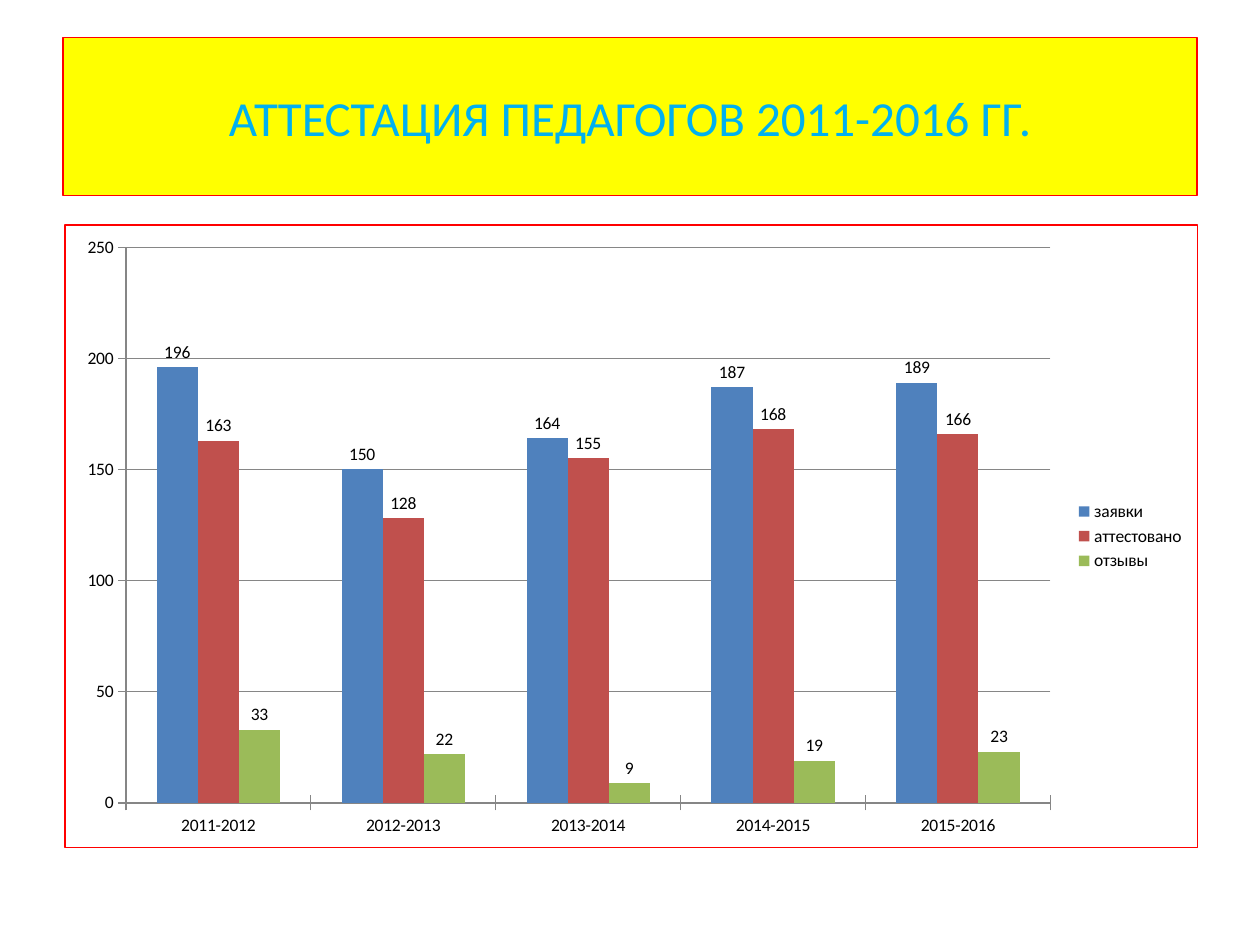
from lxml import etree
from pptx import Presentation
from pptx.chart.data import CategoryChartData
from pptx.dml.color import RGBColor
from pptx.enum.chart import XL_CHART_TYPE, XL_LEGEND_POSITION, XL_LABEL_POSITION, XL_TICK_MARK
from pptx.enum.text import MSO_ANCHOR, PP_ALIGN
from pptx.oxml import parse_xml
from pptx.util import Pt

COLUMNS = XL_CHART_TYPE.COLUMN_CLUSTERED
RIGHT = XL_LEGEND_POSITION.RIGHT
OUTSIDE_END = XL_LABEL_POSITION.OUTSIDE_END
CROSS = XL_TICK_MARK.CROSS
MIDDLE = MSO_ANCHOR.MIDDLE
CENTER = PP_ALIGN.CENTER

YEARS = ["2011-2012", "2012-2013", "2013-2014", "2014-2015", "2015-2016"]
COUNTS = [
    ("заявки", "4F81BD", (196, 150, 164, 187, 189)),
    ("аттестовано", "C0504D", (163, 128, 155, 168, 166)),
    ("отзывы", "9BBB59", (33, 22, 9, 19, 23)),
]
BORDER_XML = (
    '<c:spPr xmlns:c="http://schemas.openxmlformats.org/drawingml/2006/chart"'
    ' xmlns:a="http://schemas.openxmlformats.org/drawingml/2006/main">'
    '<a:ln w="{width}"><a:solidFill><a:srgbClr val="{color}"/></a:solidFill></a:ln></c:spPr>'
)


def rgb(color):
    return RGBColor.from_string(color)


class AttestationSlide:
    """Draws the title and the column chart in one shared style."""

    typeface = "Calibri"
    border = "FF0000"
    border_width = Pt(0.75)
    axis_gray = "868686"

    def __init__(self, slide):
        self.slide = slide

    def set_font(self, font, size, color):
        font.name = self.typeface
        font.size = Pt(size)
        font.color.rgb = rgb(color)

    def title(self, wording, left, top, width, height):
        heading = self.slide.shapes.title
        heading.left, heading.top = Pt(left), Pt(top)
        heading.width, heading.height = Pt(width), Pt(height)
        heading.fill.solid()
        heading.fill.fore_color.rgb = rgb("FFFF00")
        heading.line.color.rgb = rgb(self.border)
        heading.line.width = self.border_width
        heading.text_frame.text = wording
        heading.text_frame.vertical_anchor = MIDDLE
        paragraph = heading.text_frame.paragraphs[0]
        paragraph.alignment = CENTER
        self.set_font(paragraph.font, 28, "00B0F0")

    def columns(self, categories, series, left, top, width, height):
        counts = CategoryChartData()
        counts.categories = categories
        for name, _, values in series:
            counts.add_series(name, values)
        chart = self.slide.shapes.add_chart(
            COLUMNS, Pt(left), Pt(top), Pt(width), Pt(height), counts
        ).chart
        self.set_font(chart.font, 10, "000000")
        chart.has_title = False
        chart.has_legend = True
        chart.legend.position = RIGHT
        chart.legend.include_in_layout = False
        plot = chart.plots[0]
        plot.gap_width = 150
        plot.overlap = 0
        plot.vary_by_categories = False
        for bars, (_, color, _) in zip(plot.series, series):
            bars.format.fill.solid()
            bars.format.fill.fore_color.rgb = rgb(color)
            bars.data_labels.show_value = True
            bars.data_labels.position = OUTSIDE_END
        for axis in (chart.category_axis, chart.value_axis):
            axis.major_tick_mark = CROSS
            axis.format.line.color.rgb = rgb(self.axis_gray)
        chart.value_axis.has_major_gridlines = True
        chart.value_axis.major_gridlines.format.line.color.rgb = rgb(self.axis_gray)
        chart.value_axis.minimum_scale = 0
        chart.value_axis.maximum_scale = 250
        chart.value_axis.major_unit = 50
        self.frame(chart)

    def frame(self, chart):
        outline = parse_xml(BORDER_XML.format(width=int(self.border_width), color=self.border))
        for part in chart.element:
            if etree.QName(part).localname == "chart":
                part.addnext(outline)
                break


def main():
    deck = Presentation()
    deck.slide_width, deck.slide_height = Pt(720), Pt(540)
    page = AttestationSlide(deck.slides.add_slide(deck.slide_layouts[5]))
    page.title("АТТЕСТАЦИЯ ПЕДАГОГОВ 2011-2016 ГГ.", 36, 21.6, 648, 90)
    page.columns(YEARS, COUNTS, 36.7, 128.2, 648, 356.4)
    deck.save("out.pptx")


if __name__ == "__main__":
    main()
